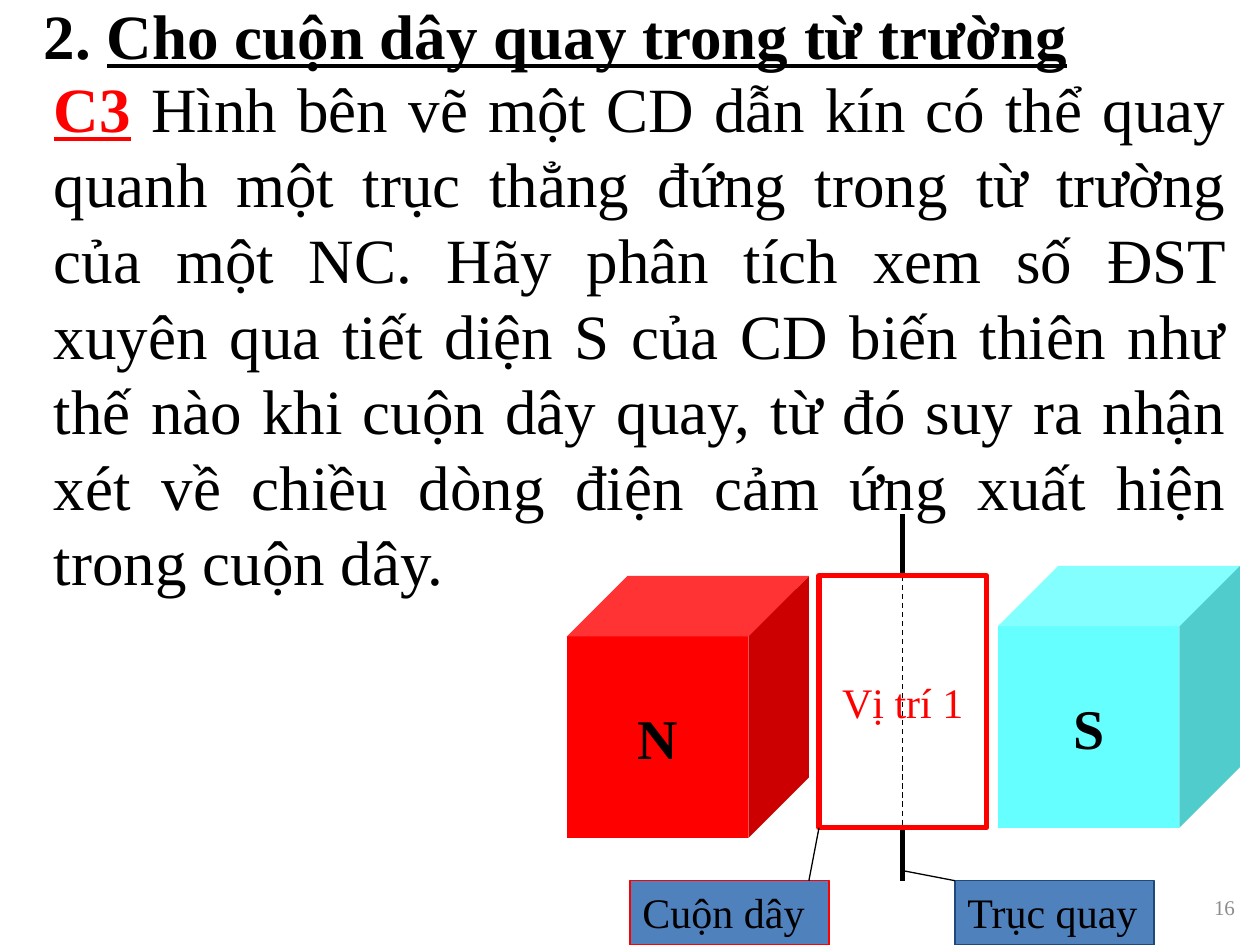
from lxml.etree import SubElement
from pptx import Presentation
from pptx.dml.color import RGBColor
from pptx.enum.dml import MSO_LINE
from pptx.enum.shapes import MSO_CONNECTOR, MSO_SHAPE
from pptx.enum.text import MSO_ANCHOR, PP_ALIGN
from pptx.oxml.ns import qn
from pptx.util import Inches, Pt

FONT = "Times New Roman"
RED, BLACK, GREY, BLUE, NAVY, CYAN = "FF0000", "000000", "8C8C8C", "4F81BD", "1F497D", "66FFFF"

# Runs: text, colour, bold, underline
TITLE = [("2. ", BLACK, True, False),
         ("Cho cuộn dây quay trong từ trường", BLACK, True, True)]
QUESTION = [
    ("C3", RED, True, True),
    (" Hình bên vẽ một CD dẫn kín có thể quay quanh một trục thẳng đứng trong từ trường "
     "của một NC. Hãy phân tích xem số ĐST xuyên qua tiết diện S của CD biến thiên như "
     "thế nào khi cuộn dây quay, từ đó suy ra nhận xét về chiều dòng điện cảm ứng xuất "
     "hiện trong cuộn dây.", BLACK, False, False)]
PAGE = [("16", GREY, False, False)]

COIL_LEFT, COIL_TOP, COIL_W, COIL_H = 6.5, 4.57, 1.33, 2
COIL_BOTTOM = COIL_TOP + COIL_H
AXIS_X = COIL_LEFT + COIL_W / 2
AXIS_TOP, LABEL_TOP = 4.08, 6.99
LABEL_W, LABEL_H = 1.58, 0.51
MAGNET_W, MAGNET_H = 1.92, 2.08

MAGNETS = [("N", 4.5, COIL_TOP, RED), ("S", 7.92, 4.49, CYAN)]
LABELS = [("Cuộn dây", 5, RED), ("Trục quay", 7.58, NAVY)]
# Lines: start, end, width, dashed
AXIS = [((AXIS_X, AXIS_TOP), (AXIS_X, COIL_TOP), 3, False),
        ((AXIS_X, COIL_TOP), (AXIS_X, COIL_BOTTOM), 0.75, True),
        ((AXIS_X, COIL_BOTTOM), (AXIS_X, LABEL_TOP), 3, False)]
LEADERS = [((COIL_LEFT, COIL_BOTTOM), (6.42, LABEL_TOP), 0.75, False),
           ((AXIS_X, 6.91), (7.58, LABEL_TOP), 0.75, False)]


def color(hex_code):
    return RGBColor.from_string(hex_code)


def write(s, runs, size, align=PP_ALIGN.LEFT, anchor=MSO_ANCHOR.TOP, wrap=True):
    tf = s.text_frame
    tf.word_wrap, tf.vertical_anchor = wrap, anchor
    p = tf.paragraphs[0]
    p.alignment = align
    p.font.name, p.font.size = FONT, Pt(size)
    for text, hex_code, bold, underline in runs:
        r = p.add_run()
        r.text = text
        r.font.name, r.font.size = FONT, Pt(size)
        r.font.bold, r.font.underline = bold, underline
        r.font.color.rgb = color(hex_code)


def add_text(box, *args, **kwargs):
    write(sp.add_textbox(*map(Inches, box)), *args, **kwargs)


def add_shape(kind, box, fill=None, line=None, width=0.75):
    s = sp.add_shape(kind, *map(Inches, box))
    s.shadow.inherit = False
    if fill:
        s.fill.solid()
        s.fill.fore_color.rgb = color(fill)
    else:
        s.fill.background()
    if line:
        s.line.color.rgb = color(line)
        s.line.width = Pt(width)
    else:
        s.line.fill.background()
    return s


def add_line(start, end, width, dashed):
    s = sp.add_connector(MSO_CONNECTOR.STRAIGHT, *map(Inches, start + end))
    s.line.color.rgb = color(BLACK)
    s.line.width = Pt(width)
    if dashed:
        s.line.dash_style = MSO_LINE.DASH
    SubElement(s._element.spPr, qn("a:effectLst"))


prs = Presentation()
prs.slide_width, prs.slide_height = Inches(10), Inches(7.5)
sp = prs.slides.add_slide(prs.slide_layouts[6]).shapes
centred = dict(align=PP_ALIGN.CENTER, anchor=MSO_ANCHOR.MIDDLE, wrap=False)

add_text((9.5, 7, 0.4, 0.4), PAGE, 12, PP_ALIGN.RIGHT, MSO_ANCHOR.MIDDLE)
add_text((0.33, 0.5, 9.5, 5.25), QUESTION, 36, PP_ALIGN.JUSTIFY)
add_text((0.25, -0.08, 9, 0.71), TITLE, 36)

for pole, left, top, fill in MAGNETS:
    s = add_shape(MSO_SHAPE.CUBE, (left, top, MAGNET_W, MAGNET_H), fill)
    write(s, [(pole, BLACK, True, False)], 32, **centred)

for line in AXIS:
    add_line(*line)
coil = add_shape(MSO_SHAPE.RECTANGLE, (COIL_LEFT, COIL_TOP, COIL_W, COIL_H), line=RED, width=3)
write(coil, [("Vị trí 1", RED, False, False)], 24, **centred)

for text, left, border in LABELS:
    s = add_shape(MSO_SHAPE.RECTANGLE, (left, LABEL_TOP, LABEL_W, LABEL_H), BLUE, border)
    write(s, [(text, BLACK, False, False)], 24)
for line in LEADERS:
    add_line(*line)

prs.save("out.pptx")
